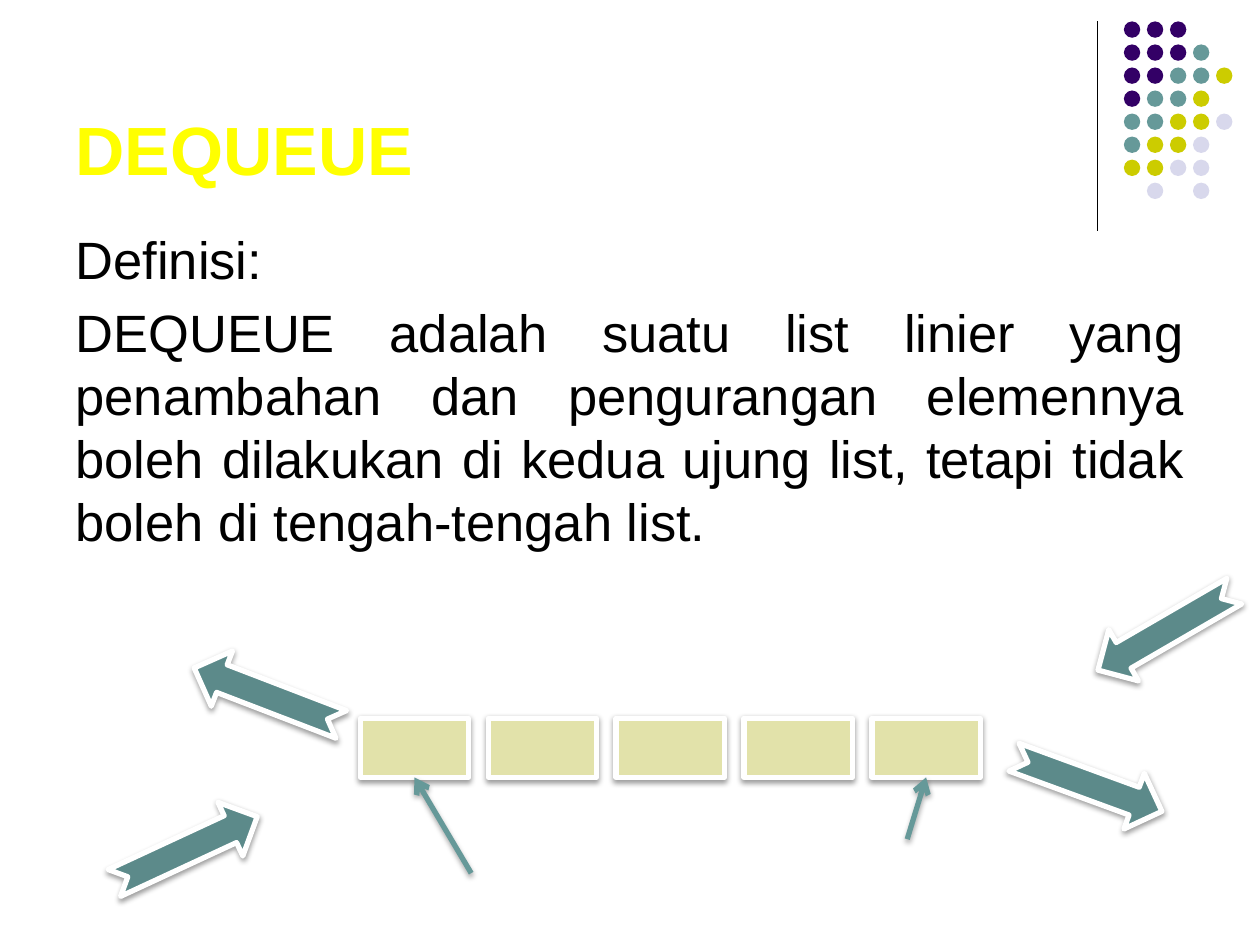
from lxml.etree import SubElement
from pptx import Presentation
from pptx.dml.color import RGBColor
from pptx.enum.shapes import MSO_CONNECTOR as Connector, MSO_SHAPE as Shape
from pptx.enum.text import MSO_ANCHOR as Anchor, MSO_AUTO_SIZE as AutoSize, PP_ALIGN as Align
from pptx.oxml.ns import qn
from pptx.util import Inches, Pt

BLACK = RGBColor(0x00, 0x00, 0x00)
WHITE = RGBColor(0xFF, 0xFF, 0xFF)
YELLOW = RGBColor(0xFF, 0xFF, 0x00)
PURPLE = RGBColor(0x33, 0x00, 0x66)
TEAL = RGBColor(0x66, 0x99, 0x99)
DARK_TEAL = RGBColor(0x5C, 0x8A, 0x8A)
OLIVE = RGBColor(0xCC, 0xCC, 0x00)
LAVENDER = RGBColor(0xD8, 0xD8, 0xEC)
SAND = RGBColor(0xE2, 0xE2, 0xAA)

DOT_COLORS = {"P": PURPLE, "T": TEAL, "O": OLIVE, "L": LAVENDER}
DOT_ROWS = ["PPP", "PPPT", "PPTTO", "PTTO", "TTOOL", "TOOL", "OOLL", ".L.L"]
DEFINITION = [
    "Definisi:",
    "DEQUEUE adalah suatu list linier yang penambahan dan pengurangan elemennya "
    "boleh dilakukan di kedua ujung list, tetapi tidak boleh di tengah-tengah list.",
]
ARROWS = [(0.85, 6.51, 335.1), (8.01, 5.99, 20.1), (8.63, 4.77, 149.9), (1.5, 5.29, 201)]


def place(shape, left, top, width, height):
    shape.left, shape.top = Inches(left), Inches(top)
    shape.width, shape.height = Inches(width), Inches(height)


def style_font(paragraph, size, color, bold=False):
    font = paragraph.font
    font.name = "Arial"
    font.size = Pt(size)
    font.bold = bold
    font.color.rgb = color


def add_shadow(shape, opacity, distance):
    effects = SubElement(shape._element.spPr, qn("a:effectLst"))
    shadow = SubElement(effects, qn("a:outerShdw"), blurRad="40000",
                        dist=str(Pt(distance)), dir="5400000", rotWithShape="0")
    color = SubElement(shadow, qn("a:srgbClr"), val=str(BLACK))
    SubElement(color, qn("a:alpha"), val=str(opacity * 1000))


def add_outlined_shape(slide, kind, left, top, width, height, fill, rotation=0):
    shape = slide.shapes.add_shape(kind, Inches(left), Inches(top), Inches(width), Inches(height))
    shape.rotation = rotation
    shape.fill.solid()
    shape.fill.fore_color.rgb = fill
    shape.line.color.rgb = WHITE
    shape.line.width = Pt(3)
    add_shadow(shape, 38, 1.6)


def add_line(slide, start, end, color, width):
    line = slide.shapes.add_connector(Connector.STRAIGHT, *map(Inches, start + end))
    line.line.color.rgb = color
    line.line.width = Pt(width)
    return line


def add_pointer(slide, start, end):
    pointer = add_line(slide, start, end, TEAL, 3)
    SubElement(pointer.line._get_or_add_ln(), qn("a:tailEnd"), type="arrow")
    add_shadow(pointer, 35, 1.8)


def add_dots(slide):
    pitch = 1.28 / 7
    for row, codes in enumerate(DOT_ROWS):
        for column, code in enumerate(codes):
            if code not in DOT_COLORS:
                continue
            dot = slide.shapes.add_shape(
                Shape.OVAL, Inches(8.92 + column * pitch), Inches(0.17 + row * pitch),
                Inches(0.13), Inches(0.13))
            dot.shadow.inherit = False
            dot.fill.solid()
            dot.fill.fore_color.rgb = DOT_COLORS[code]
            dot.line.fill.background()


def fill_title(title):
    place(title, 0.5, 0.13, 8.25, 1.42)
    frame = title.text_frame
    frame.text = "DEQUEUE"
    frame.auto_size = AutoSize.NONE
    frame.vertical_anchor = Anchor.BOTTOM
    frame.paragraphs[0].alignment = Align.LEFT
    style_font(frame.paragraphs[0], 39, YELLOW, bold=True)


def fill_body(body):
    place(body, 0.5, 1.75, 9, 5.46)
    frame = body.text_frame
    frame.text = "\n".join(DEFINITION)
    frame.auto_size = AutoSize.NONE
    for index, paragraph in enumerate(frame.paragraphs):
        properties = paragraph._p.get_or_add_pPr()
        properties.set("marL", "0")
        properties.set("indent", "0")
        SubElement(properties, qn("a:buNone"))
        paragraph.alignment = Align.JUSTIFY
        paragraph.space_before = Pt(6 if index else 0)
        style_font(paragraph, 30, BLACK)


def main():
    presentation = Presentation()
    presentation.slide_width, presentation.slide_height = Inches(10), Inches(7.5)
    slide = presentation.slides.add_slide(presentation.slide_layouts[1])

    fill_title(slide.shapes.title)
    fill_body(slide.placeholders[1])
    divider = add_line(slide, (8.71, 0.17), (8.71, 1.83), BLACK, 0.75)
    SubElement(divider._element.spPr, qn("a:effectLst"))
    add_dots(slide)

    for index in range(5):
        add_outlined_shape(slide, Shape.RECTANGLE, 2.86 + index * 1.015, 5.7, 0.86, 0.47, SAND)
    add_pointer(slide, (7.2, 6.66), (7.35, 6.17))
    add_pointer(slide, (3.74, 6.93), (3.29, 6.17))
    for left, top, rotation in ARROWS:
        add_outlined_shape(slide, Shape.NOTCHED_RIGHT_ARROW, left, top, 1.25, 0.47,
                           DARK_TEAL, rotation)

    presentation.save("out.pptx")


if __name__ == "__main__":
    main()
